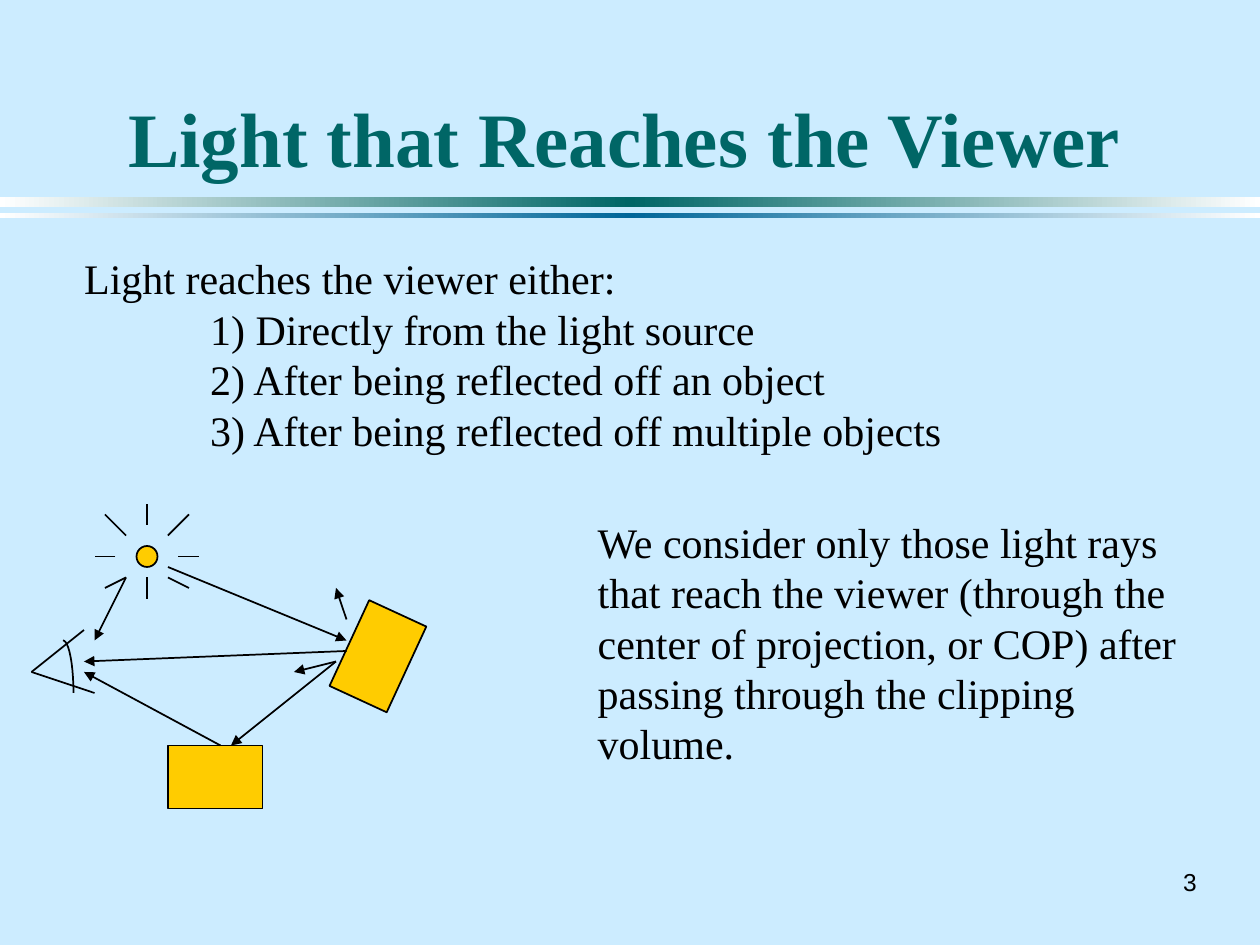
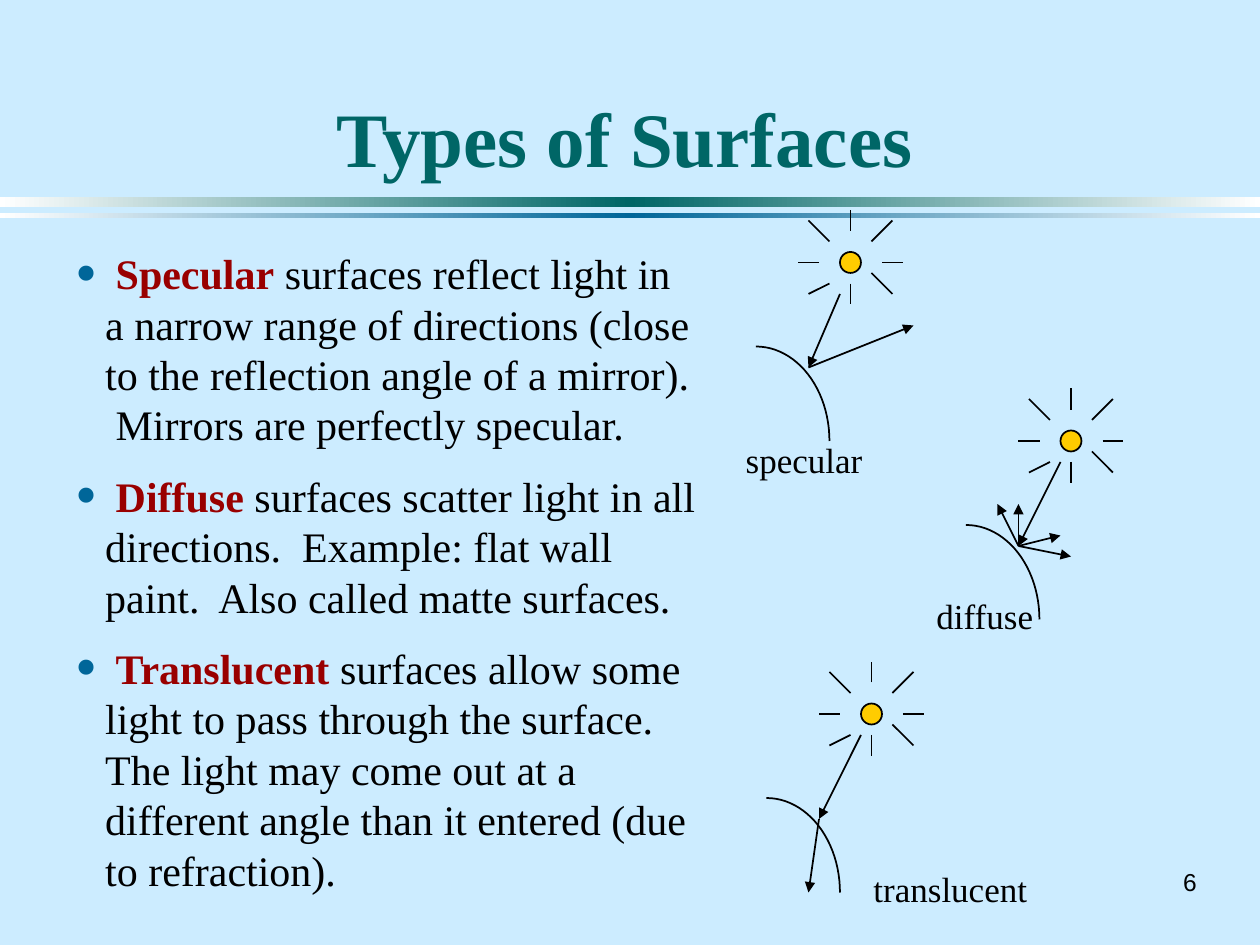
import math

from lxml import etree
from pptx import Presentation
from pptx.dml.color import RGBColor
from pptx.enum import shapes, text
from pptx.oxml.ns import qn
from pptx.util import Pt

SKY = RGBColor(0xCC, 0xEC, 0xFF)
WHITE = RGBColor(0xFF, 0xFF, 0xFF)
TEAL = RGBColor(0x00, 0x66, 0x66)
BLUE = RGBColor(0x00, 0x66, 0x99)
RED = RGBColor(0x99, 0x00, 0x00)
GOLD = RGBColor(0xFF, 0xCC, 0x00)
BLACK = RGBColor(0, 0, 0)
SERIF, SANS = "Times New Roman", "Arial"

GRID = 6  # points per drawing unit
SLIDE_W, SLIDE_H = 720, 540
SUN_RAYS = [((0, -3), (0, -5)), ((3, 0), (5, 0)), ((2, -2), (4, -4)),
            ((-3, 0), (-5, 0)), ((-2, -2), (-4, -4)),
            ((-2, 2), (-4, 3)), ((0, 2), (0, 4))]


def at(origin, point):
    """Turn a point in drawing units into points on the slide."""
    return origin[0] + GRID * point[0], origin[1] + GRID * point[1]


def style_run(run, size, color=BLACK, font=SERIF, bold=False):
    run.font.size = Pt(size)
    run.font.name = font
    run.font.bold = bold
    run.font.color.rgb = color


def add_text(slide, box, lines, size, wrap=True, align=text.PP_ALIGN.LEFT,
             anchor=text.MSO_ANCHOR.TOP, **style):
    frame = slide.shapes.add_textbox(*map(Pt, box)).text_frame
    frame.word_wrap = wrap
    if not wrap:
        frame.auto_size = text.MSO_AUTO_SIZE.SHAPE_TO_FIT_TEXT
    frame.vertical_anchor = anchor
    frame.text = "\n".join(lines)
    for paragraph in frame.paragraphs:
        paragraph.alignment = align
        for run in paragraph.runs:
            style_run(run, size, **style)
    return frame


def add_filled(slide, kind, box, color=GOLD):
    shape = slide.shapes.add_shape(kind, *map(Pt, box))
    shape.shadow.inherit = False
    shape.fill.solid()
    shape.fill.fore_color.rgb = color
    shape.line.color.rgb = BLACK
    shape.line.width = Pt(1)
    return shape


def add_line(slide, origin, start, end, arrow=False):
    connector = slide.shapes.add_connector(
        shapes.MSO_CONNECTOR.STRAIGHT,
        *map(Pt, at(origin, start) + at(origin, end)))
    connector.line.color.rgb = BLACK
    connector.line.width = Pt(1)
    properties = connector.element.spPr
    if arrow:
        etree.SubElement(properties.find(qn("a:ln")), qn("a:tailEnd"), type="triangle")
    etree.SubElement(properties, qn("a:effectLst"))


def add_quarter_arc(slide, origin, corner, width, height, steps=24):
    """Draw the upper right quarter of an ellipse in the given box."""
    angles = [math.pi / 2 * step / steps for step in range(steps + 1)]
    points = [at(origin, (corner[0] + width * math.sin(angle),
                          corner[1] + height * (1 - math.cos(angle))))
              for angle in angles]
    outline = [(Pt(x), Pt(y)) for x, y in points]
    builder = slide.shapes.build_freeform(*outline[0])
    builder.add_line_segments(outline[1:], close=False)
    arc = builder.convert_to_shape()
    arc.shadow.inherit = False
    arc.fill.background()
    arc.line.color.rgb = BLACK
    arc.line.width = Pt(1)


def add_band(slide, top, height, color):
    band = add_filled(slide, shapes.MSO_SHAPE.RECTANGLE, (0, top, SLIDE_W, height))
    band.line.fill.background()
    band.fill.gradient()
    band.fill.gradient_angle = 0
    stops = band.element.spPr.find(qn("a:gradFill")).find(qn("a:gsLst"))
    for stop in list(stops):
        stops.remove(stop)
    for percent, shade in ((0, WHITE), (50, color), (100, WHITE)):
        stop = etree.SubElement(stops, qn("a:gs"), pos=str(percent * 1000))
        etree.SubElement(stop, qn("a:srgbClr"), val=str(shade))


def add_base_slide(deck, title, number):
    slide = deck.slides.add_slide(deck.slide_layouts[6])
    slide.background.fill.solid()
    slide.background.fill.fore_color.rgb = SKY
    add_band(slide, 112.5, 6, TEAL)
    add_band(slide, 121.5, 3, BLUE)
    add_text(slide, (660, 492, 31, 24), [number], 14, font=SANS,
             align=text.PP_ALIGN.RIGHT, anchor=text.MSO_ANCHOR.MIDDLE)
    add_text(slide, (48, 18, 618, 90), [title], 44, color=TEAL, bold=True,
             align=text.PP_ALIGN.CENTER, anchor=text.MSO_ANCHOR.BOTTOM)
    return slide


def add_sun(slide, center, last_ray):
    x, y = center
    add_filled(slide, shapes.MSO_SHAPE.OVAL, (x - GRID, y - GRID, 2 * GRID, 2 * GRID))
    for start, end in SUN_RAYS + [last_ray]:
        add_line(slide, center, start, end)


def add_light_paths(slide, origin):
    """Draw sun, eye and two blocks with the light rays between them."""
    add_sun(slide, at(origin, (11, 5)), ((2, 2), (4, 3)))
    for corner, rotation in (((28.5, 11.5), 294.8), ((13, 23), 0)):
        block = add_filled(slide, shapes.MSO_SHAPE.RECTANGLE,
                           (*at(origin, corner), 9 * GRID, 6 * GRID))
        block.rotation = rotation
    for lid_end in ((5, 12), (6, 18)):
        add_line(slide, origin, (0, 16), lid_end)
    add_quarter_arc(slide, origin, (3, 13), 1, 5)
    light_rays = [((13, 6), (30, 13)), ((30, 14), (5, 15)), ((29, 15), (19, 23)),
                  ((18, 23), (5, 16)), ((30, 11), (29, 8)), ((29, 15), (25, 16)),
                  ((9, 7), (6, 13))]
    for start, end in light_rays:
        add_line(slide, origin, start, end, arrow=True)


def add_surface(slide, origin, sun, ray_start, outgoing, label, label_box):
    """Draw a curved surface; all offsets are taken from its top left corner."""
    hit = (5, 2)
    add_quarter_arc(slide, origin, (0, 0), 7, 9)
    add_sun(slide, at(origin, sun), ((2, 1), (4, 3)))
    add_line(slide, origin, ray_start, hit, arrow=True)
    for end in outgoing:
        add_line(slide, at(origin, hit), (0, 0), end, arrow=True)
    dx, dy, width = label_box
    add_text(slide, (origin[0] + dx, origin[1] + dy, width, 31), [label], 20, wrap=False)


def add_surface_list(slide, box, entries):
    frame = add_text(slide, box, [""] * len(entries), 24)
    for index, (paragraph, (term, meaning)) in enumerate(zip(frame.paragraphs, entries)):
        paragraph.space_before = Pt(12 if index else 0)
        for words, color in ((" ", BLACK), (term, RED), (meaning, BLACK)):
            run = paragraph.add_run()
            run.text = words
            style_run(run, 24, color, bold=color == RED)
        properties = paragraph._p.get_or_add_pPr()
        properties.set("marL", str(Pt(17)))
        properties.set("indent", str(-Pt(17)))
        bullet_color = etree.SubElement(properties, qn("a:buClr"))
        etree.SubElement(bullet_color, qn("a:srgbClr"), val=str(BLUE))
        etree.SubElement(properties, qn("a:buSzPct"), val="150000")
        etree.SubElement(properties, qn("a:buFont"), typeface=SERIF)
        etree.SubElement(properties, qn("a:buChar"), char="•")


def build_viewer_slide(deck):
    slide = add_base_slide(deck, "Light that Reaches the Viewer", "3")
    ways = add_text(slide, (41, 141, 506, 122), [
        "Light reaches the viewer either:",
        "1) Directly from the light source",
        "2) After being reflected off an object",
        "3) After being reflected off multiple objects"], 24)
    for way in ways.paragraphs[1:]:
        way._p.get_or_add_pPr().set("marL", str(Pt(72)))
    add_light_paths(slide, (18, 288))
    add_text(slide, (334.5, 291.5, 355, 151), [
        "We consider only those light rays that reach the viewer (through the "
        "center of projection, or COP) after passing through the clipping volume."], 24)


def build_surfaces_slide(deck):
    slide = add_base_slide(deck, "Types of Surfaces", "6")
    add_surface_list(slide, (36, 138, 370, 381), [
        ("Specular", " surfaces reflect light in a narrow range of directions (close to "
         "the reflection angle of a mirror).  Mirrors are perfectly specular."),
        ("Diffuse", " surfaces scatter light in all directions.  Example: flat wall "
         "paint.  Also called matte surfaces."),
        ("Translucent", " surfaces allow some light to pass through the surface.  The "
         "light may come out at a different angle than it entered (due to refraction)."),
    ])
    add_surface(slide, (432, 198), (9, -8), (8, -5), [(10, -4)],
                "specular", (-13, 49, 82))
    add_surface(slide, (552, 300), (10, -8), (9, -6),
                [(5, 1), (4, -1), (0, -4), (-2, -4)], "diffuse", (-24, 36, 71))
    add_surface(slide, (438, 456), (10, -8), (9, -6), [(-1, 7)],
                "translucent", (54, 36, 104))


def main():
    deck = Presentation()
    deck.slide_width, deck.slide_height = Pt(SLIDE_W), Pt(SLIDE_H)
    build_viewer_slide(deck)
    build_surfaces_slide(deck)
    deck.save("out.pptx")


if __name__ == "__main__":
    main()
